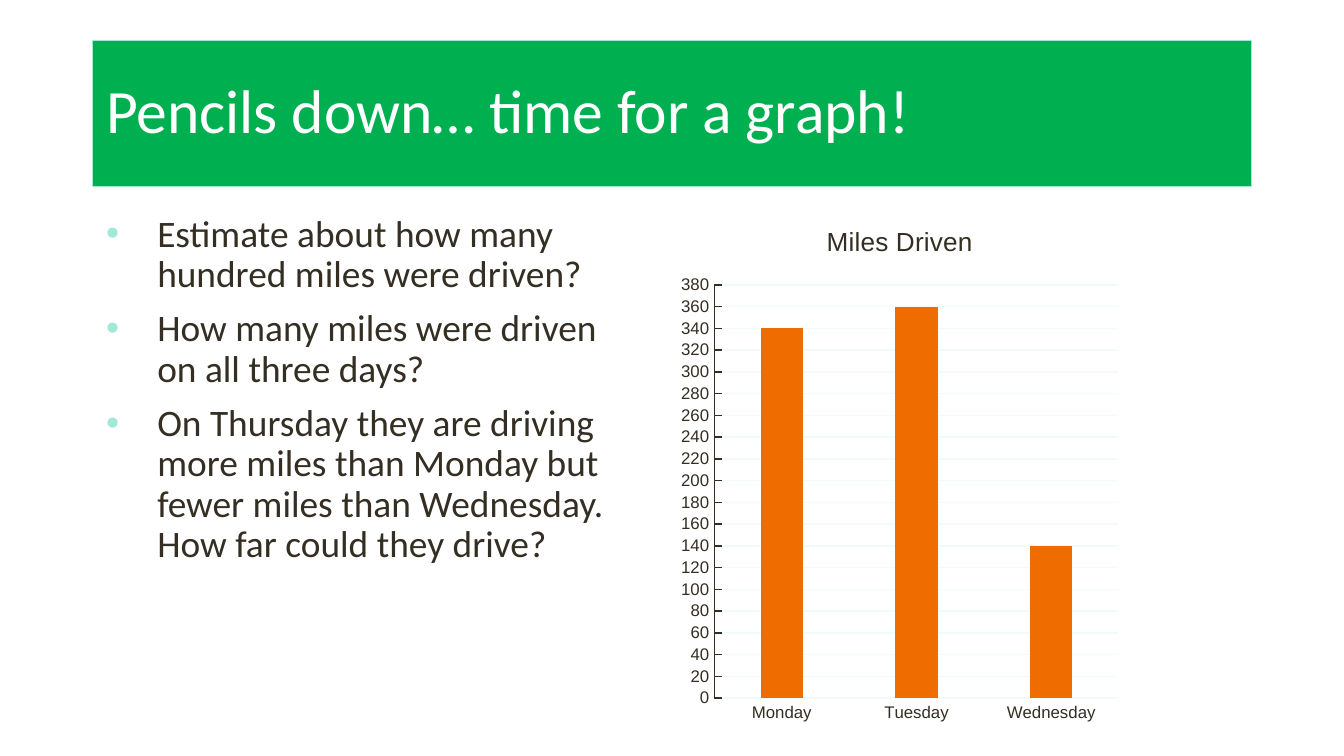
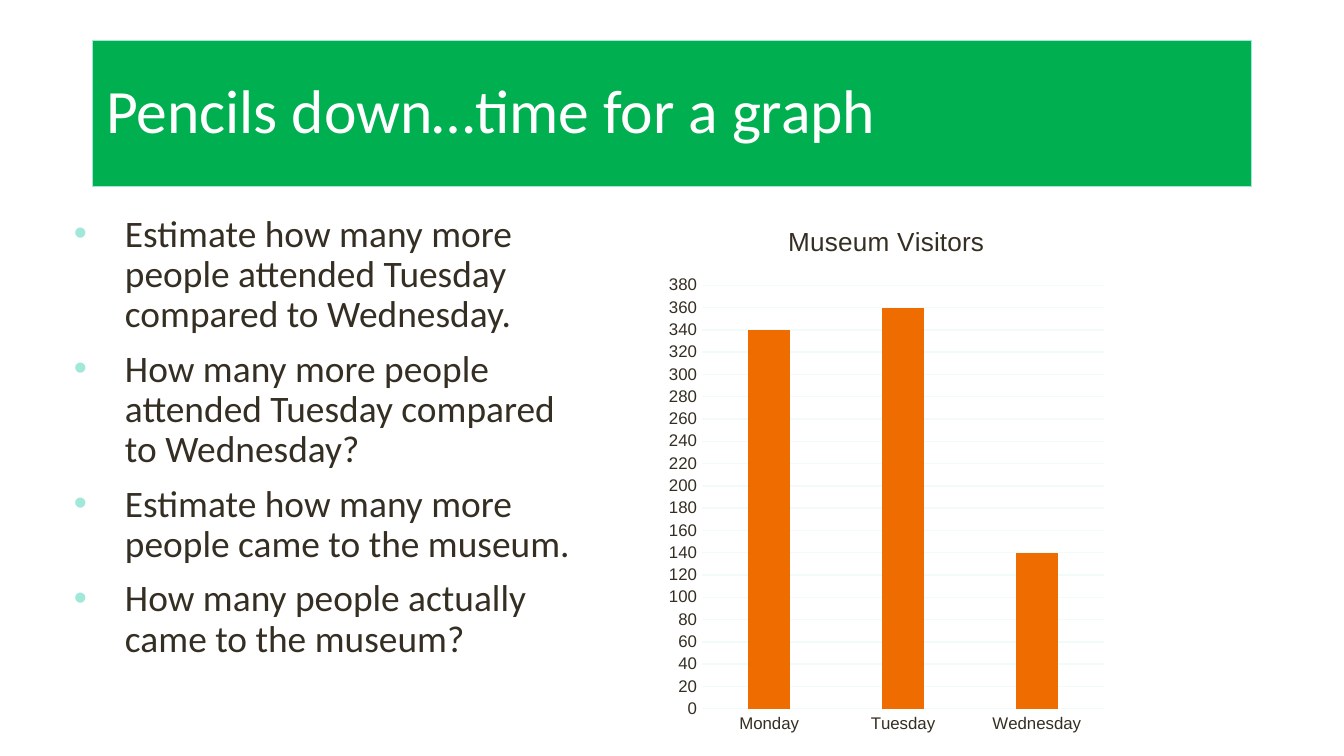
from lxml.etree import SubElement
from pptx import Presentation
from pptx.chart.data import CategoryChartData
from pptx.dml.color import RGBColor
from pptx.enum.chart import XL_CHART_TYPE, XL_TICK_LABEL_POSITION, XL_TICK_MARK
from pptx.enum.text import MSO_ANCHOR, MSO_AUTO_SIZE, PP_ALIGN
from pptx.oxml.ns import qn
from pptx.util import Inches, Pt

GREEN = RGBColor(0x00, 0xB0, 0x50)
MINT = RGBColor(0xA1, 0xE8, 0xD9)
PALE_MINT = RGBColor(0xF1, 0xFC, 0xF9)
ORANGE = RGBColor(0xEF, 0x6C, 0x00)
INK = RGBColor(0x34, 0x2E, 0x23)
WHITE = RGBColor(0xFF, 0xFF, 0xFF)
TEXT_FONT = "Calibri"
CHART_FONT = "Arial"
TITLE_BOX = (0.69, 0.3, 8.62, 1.09)
DAYS = ("Monday", "Tuesday", "Wednesday")
COUNTS = (340, 360, 140)


def style_font(font, name, size, color):
    """Set the typeface, point size and colour of a font."""
    font.name = name
    font.size = Pt(size)
    font.color.rgb = color


def style_line(line, color):
    """Give a line its colour and the common thin width."""
    line.color.rgb = color
    line.width = Pt(0.75)


def prepare_frame(placeholder, box, anchor):
    """Move a placeholder to its box and return its reset text frame."""
    placeholder.left, placeholder.top, placeholder.width, placeholder.height = map(Inches, box)
    frame = placeholder.text_frame
    frame.word_wrap = True
    frame.auto_size = MSO_AUTO_SIZE.NONE
    frame.vertical_anchor = anchor
    frame.margin_left = frame.margin_right = Inches(0.1)
    frame.margin_top = frame.margin_bottom = Inches(0.1)
    return frame


def add_line_of_text(paragraph, text, size, color):
    """Write one left-aligned paragraph as a single run."""
    paragraph.alignment = PP_ALIGN.LEFT
    paragraph.line_spacing = 0.9
    paragraph.space_after = Pt(0)
    run = paragraph.add_run()
    run.text = text
    style_font(run.font, TEXT_FONT, size, color)


def add_bullet(paragraph):
    """Give a paragraph a hanging mint bullet."""
    paragraph.space_before = Pt(7.5)
    properties = paragraph._p.get_or_add_pPr()
    properties.set("marL", str(Inches(0.38)))
    properties.set("indent", str(-Inches(0.38)))
    bullet_color = SubElement(properties, qn("a:buClr"))
    SubElement(bullet_color, qn("a:srgbClr"), val=str(MINT))
    SubElement(properties, qn("a:buFont"), typeface=CHART_FONT)
    SubElement(properties, qn("a:buChar"), char="•")


def fill_title(slide, heading):
    """Turn the title placeholder into the green band."""
    band = slide.shapes.title
    frame = prepare_frame(band, TITLE_BOX, MSO_ANCHOR.MIDDLE)
    band.fill.solid()
    band.fill.fore_color.rgb = GREEN
    style_line(band.line, MINT)
    add_line_of_text(frame.paragraphs[0], heading, 33, WHITE)


def fill_questions(slide, box, questions):
    """List the questions in the body placeholder."""
    frame = prepare_frame(slide.placeholders[1], box, MSO_ANCHOR.TOP)
    for index, question in enumerate(questions):
        paragraph = frame.add_paragraph() if index else frame.paragraphs[0]
        add_line_of_text(paragraph, question, 20, INK)
        add_bullet(paragraph)


def style_value_axis(axis, ruled):
    """Set the count scale, with a ticked axis line if it is ruled."""
    axis.minimum_scale, axis.maximum_scale, axis.major_unit = 0, 380, 20
    axis.has_major_gridlines = True
    style_line(axis.major_gridlines.format.line, PALE_MINT)
    if ruled:
        axis.major_tick_mark = XL_TICK_MARK.INSIDE
        style_line(axis.format.line, INK)
    else:
        axis.major_tick_mark = XL_TICK_MARK.NONE
        axis.format.line.fill.background()


def add_day_chart(slide, box, heading, ruled):
    """Add the column chart of counts by day."""
    counts_by_day = CategoryChartData()
    counts_by_day.categories = DAYS
    counts_by_day.add_series("Series 1", COUNTS)
    chart = slide.shapes.add_chart(
        XL_CHART_TYPE.COLUMN_CLUSTERED, *map(Inches, box), counts_by_day
    ).chart
    style_font(chart.font, CHART_FONT, 10, MINT)
    chart.has_legend = False
    chart.has_title = True
    chart.chart_title.include_in_layout = False
    title_run = chart.chart_title.text_frame.paragraphs[0].add_run()
    title_run.text = heading
    style_font(title_run.font, CHART_FONT, 14, INK)
    title_run.font.bold = False

    columns = chart.plots[0]
    columns.vary_by_categories = False
    columns.gap_width = 219
    columns.overlap = -27
    columns.series[0].format.fill.solid()
    columns.series[0].format.fill.fore_color.rgb = ORANGE

    for axis in (chart.category_axis, chart.value_axis):
        style_font(axis.tick_labels.font, CHART_FONT, 9, INK)
        axis.tick_label_position = XL_TICK_LABEL_POSITION.NEXT_TO_AXIS
        axis.minor_tick_mark = XL_TICK_MARK.NONE
    chart.category_axis.major_tick_mark = XL_TICK_MARK.NONE
    style_line(chart.category_axis.format.line, PALE_MINT)
    style_value_axis(chart.value_axis, ruled)


def add_graph_slide(deck, heading, questions_box, questions, chart_box, chart_heading, ruled):
    """Add a slide with a title band, questions and a chart."""
    slide = deck.slides.add_slide(deck.slide_layouts[1])
    fill_title(slide, heading)
    fill_questions(slide, questions_box, questions)
    add_day_chart(slide, chart_box, chart_heading, ruled)


def main():
    """Build and save the deck."""
    deck = Presentation()
    deck.slide_width = Inches(10)
    deck.slide_height = Inches(10 * 9 / 16)
    add_graph_slide(
        deck,
        "Pencils down… time for a graph!",
        (0.69, 1.5, 3.92, 3.57),
        (
            "Estimate about how many hundred miles were driven?",
            "How many miles were driven on all three days?",
            "On Thursday they are driving more miles than Monday but fewer miles "
            "than Wednesday. How far could they drive?",
        ),
        (5, 1.5, 3.39, 3.96),
        "Miles Driven",
        ruled=True,
    )
    add_graph_slide(
        deck,
        "Pencils down…time for a graph",
        (0.45, 1.5, 4.04, 3.57),
        (
            "Estimate how many more people attended Tuesday compared to Wednesday.",
            "How many more people attended Tuesday compared to Wednesday?",
            "Estimate how many more people came to the museum.",
            "How many people actually came to the museum?",
        ),
        (4.91, 1.5, 3.37, 4.04),
        "Museum Visitors",
        ruled=False,
    )
    deck.save("out.pptx")


if __name__ == "__main__":
    main()
